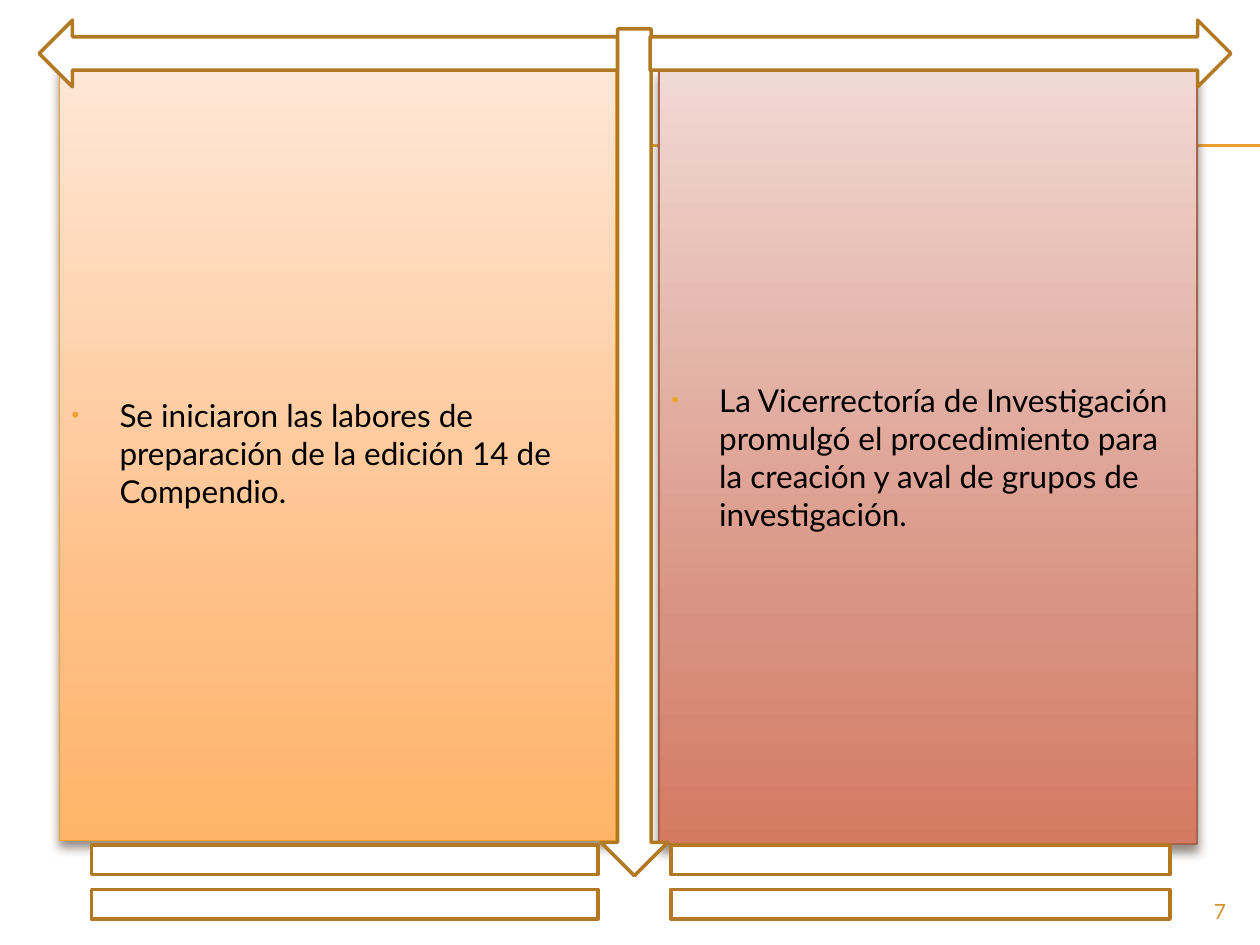
import pptx
import pptx.dml.color
import pptx.enum.shapes
import pptx.enum.text
import pptx.oxml
import pptx.oxml.ns
import pptx.util
from pptx.util import Inches

SHAPE = pptx.enum.shapes.MSO_SHAPE
ALIGN = pptx.enum.text.PP_ALIGN
ANCHOR = pptx.enum.text.MSO_ANCHOR
GOLD, BROWN, WHITE = "F0A22E", "B27822", "FFFFFF"


def color(value):
    return pptx.dml.color.RGBColor.from_string(value)


def add_xml(parent, xml):
    """Append a drawing element written as short XML."""
    tag, rest = xml.split(" ", 1)
    node = pptx.oxml.parse_xml(f"{tag} {pptx.oxml.ns.nsdecls('a')} {rest}")
    parent.append(node)


def write_text(frame, text, *, size, fill="000000", align=ALIGN.LEFT,
               anchor=ANCHOR.TOP, before=0, bullet=None, indent=0):
    frame.word_wrap = True
    frame.vertical_anchor = anchor
    para = frame.paragraphs[0]
    para.alignment = align
    para.space_before = pptx.util.Pt(before)
    span = para.add_run()
    span.text = text
    span.font.size = pptx.util.Pt(size)
    span.font.name = "Lato"
    span.font.color.rgb = color(fill)
    if bullet:
        properties = para._p.get_or_add_pPr()
        properties.set("marL", str(Inches(indent)))
        properties.set("indent", str(-Inches(indent)))
        add_xml(properties, f'<a:buClr ><a:srgbClr val="{GOLD}"/></a:buClr>')
        add_xml(properties, '<a:buSzPct val="70000"/>')
        add_xml(properties, '<a:buFont typeface="Arial"/>')
        add_xml(properties, f'<a:buChar char="{bullet}"/>')


class SlideBuilder:
    def __init__(self, deck):
        self.slide = deck.slides.add_slide(deck.slide_layouts[6])

    def rule(self, left, right, top):
        line = self.slide.shapes.add_connector(
            pptx.enum.shapes.MSO_CONNECTOR.STRAIGHT,
            Inches(left), Inches(top), Inches(right), Inches(top))
        line.line.color.rgb = color(GOLD)
        line.line.width = pptx.util.Pt(0.75)
        add_xml(line._element.spPr, "<a:effectLst />")

    def shape(self, kind, left, top, width, height, line=BROWN, weight=2):
        box = self.slide.shapes.add_shape(
            kind, Inches(left), Inches(top), Inches(width), Inches(height))
        box.shadow.inherit = False
        box.fill.solid()
        box.fill.fore_color.rgb = color(WHITE)
        box.line.color.rgb = color(line)
        box.line.width = pptx.util.Pt(weight)
        return box

    def panel(self, left, top, width, height, text, stops, line):
        box = self.shape(SHAPE.RECTANGLE, left, top, width, height, line, 0.79)
        # Gradient running from top to bottom
        box.fill.gradient()
        box.fill.gradient_angle = 270
        properties = box._element.spPr
        stop_list = properties.find(".//" + pptx.oxml.ns.qn("a:gsLst"))
        for old in list(stop_list):
            stop_list.remove(old)
        for position, shade in zip((0, 72, 100), stops):
            add_xml(stop_list, f'<a:gs pos="{position * 1000}">'
                               f'<a:srgbClr val="{shade}"/></a:gs>')
        # Soft shadow below the panel
        add_xml(properties.find(pptx.oxml.ns.qn("a:effectLst")),
                f'<a:outerShdw blurRad="{pptx.util.Pt(6)}" dist="{pptx.util.Pt(4)}" '
                'dir="5400000" rotWithShape="0"><a:srgbClr val="4E3B30">'
                '<a:alpha val="60000"/></a:srgbClr></a:outerShdw>')
        write_text(box.text_frame, text, size=18, anchor=ANCHOR.MIDDLE,
                   before=3.6, bullet="•", indent=0.38)

    def label(self, left, top, width, height, text, **style):
        box = self.slide.shapes.add_textbox(
            Inches(left), Inches(top), Inches(width), Inches(height))
        write_text(box.text_frame, text, **style)


def main():
    deck = pptx.Presentation()
    deck.slide_width, deck.slide_height = Inches(10), Inches(7.5)
    page = SlideBuilder(deck)

    # Double rule behind the panels
    for top in (1.15, 1.16):
        page.rule(0.56, 10, top)

    # Text panels
    page.panel(0.47, 0.52, 4.42, 6.15,
               "Se iniciaron las labores de preparación de la edición 14 de "
               "Compendio.", ("FFE7D7", "FFBE84", "FFB468"), GOLD)
    page.panel(5.23, 0.55, 4.27, 6.15,
               "La Vicerrectoría de Investigación promulgó el procedimiento "
               "para la creación y aval de grupos de investigación.",
               ("F1D9D4", "D89180", "D47A62"), "A5644E")

    # Frame of arrows and double bars
    for kind, *place in (
            (SHAPE.DOWN_ARROW, 4.77, 0.23, 0.53, 6.72),
            (SHAPE.RIGHT_ARROW, 5.16, 0.16, 4.61, 0.53),
            (SHAPE.LEFT_ARROW, 0.31, 0.16, 4.59, 0.53),
            (SHAPE.MATH_EQUAL, 0, 6.5, 5.47, 1),
            (SHAPE.MATH_EQUAL, 4.61, 6.5, 5.39, 1)):
        page.shape(kind, *place)

    # Page number
    page.label(9, 7.08, 0.83, 0.27, "7", size=12, fill="D48F29",
               align=ALIGN.RIGHT)

    deck.save("out.pptx")


if __name__ == "__main__":
    main()
